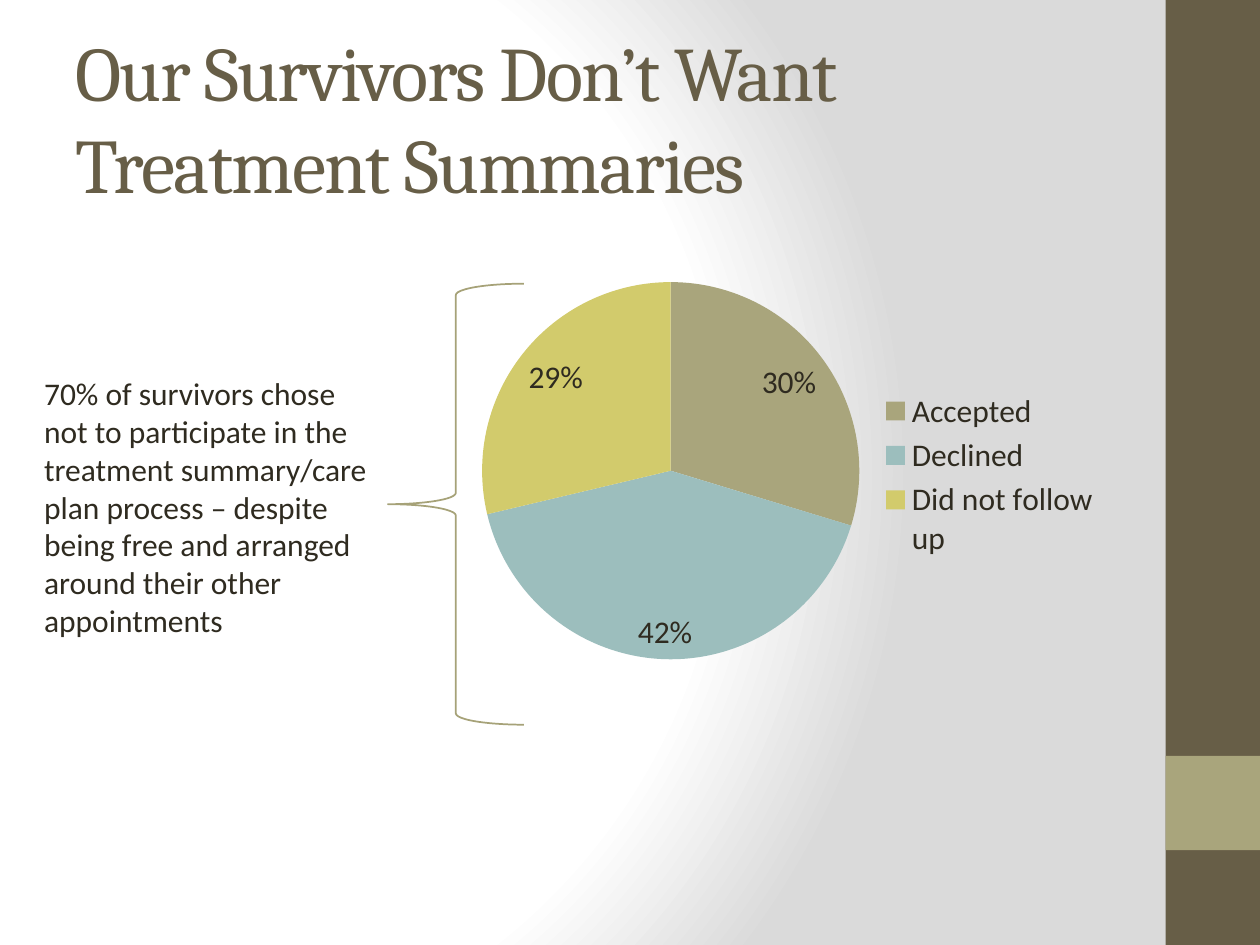
import pptx
import pptx.util
import pptx.chart.data
import pptx.dml.color
import pptx.enum.chart
import pptx.enum.shapes
import pptx.enum.text
import pptx.oxml
import pptx.oxml.ns
from pptx.util import Cm, Pt

RGBColor = pptx.dml.color.RGBColor
BROWN = RGBColor(0x67, 0x5E, 0x47)
TAN = RGBColor(0xA9, 0xA5, 0x7C)
BRACE = RGBColor(0xA6, 0xA2, 0x78)
TEAL = RGBColor(0x9C, 0xBE, 0xBD)
YELLOW = RGBColor(0xD2, 0xCB, 0x6C)
INK = RGBColor(0x2F, 0x2B, 0x20)
WHITE = RGBColor(0xFF, 0xFF, 0xFF)
GREY = RGBColor(0xDA, 0xDA, 0xDA)

TITLE = "Our Survivors Don’t Want Treatment Summaries"
NOTE = ("70% of survivors chose not to participate in the treatment summary/care "
        "plan process – despite being free and arranged around their other appointments")
SLICES = [("Accepted", 30, TAN), ("Declined", 42, TEAL), ("Did not follow up", 29, YELLOW)]
STOPS = [(0, WHITE), (75, WHITE), (100, GREY)]
BARS = [((23.5, 0, 1.9, 19.05), BROWN), ((23.5, 15.24, 1.9, 1.9), TAN)]
PLOT = {"x": 0.03, "y": 0.24, "w": 0.58, "h": 0.51}


def box(dims):
    return [Cm(d) for d in dims]


def set_background(s):
    s.background.fill.gradient()
    grad = s.element.find(".//" + pptx.oxml.ns.qn("a:gradFill"))
    stops = "".join(f'<a:gs pos="{pos * 1000}"><a:srgbClr val="{color}"/></a:gs>'
                    for pos, color in STOPS)
    new = pptx.oxml.parse_xml(
        f'<a:gradFill {pptx.oxml.ns.nsdecls("a")} rotWithShape="1"><a:gsLst>{stops}</a:gsLst>'
        '<a:path path="circle"><a:fillToRect l="20000" t="50000" r="100000" b="50000"/>'
        '</a:path></a:gradFill>')
    grad.getparent().replace(grad, new)


def add_text(s, text, dims, font="Calibri", size=18, color=INK, spacing=None,
             anchor=pptx.enum.text.MSO_ANCHOR.TOP):
    tf = s.shapes.add_textbox(*box(dims)).text_frame
    tf.word_wrap = True
    tf.vertical_anchor = anchor
    r = tf.paragraphs[0].add_run()
    r.text = text
    r.font.name, r.font.size = font, Pt(size)
    r.font.color.rgb = color
    if spacing is not None:
        r.font._element.set("spc", str(spacing * 100))


def add_pie(s, dims):
    names, values, colors = zip(*SLICES)
    data = pptx.chart.data.CategoryChartData()
    data.categories = names
    data.add_series("Series 1", values)
    chart = s.shapes.add_chart(pptx.enum.chart.XL_CHART_TYPE.PIE, *box(dims), data).chart
    chart.has_title = False
    chart.font.name, chart.font.size = "Calibri", Pt(18)
    chart.font.color.rgb = INK
    chart.has_legend = True
    chart.legend.position = pptx.enum.chart.XL_LEGEND_POSITION.RIGHT
    chart.legend.include_in_layout = False
    plot = chart.plots[0]
    plot.vary_by_categories = True
    plot.has_data_labels = True
    labels = plot.data_labels
    labels.show_percentage, labels.show_value = True, False
    labels.number_format, labels.number_format_is_linked = "0%", False
    labels.position = pptx.enum.chart.XL_LABEL_POSITION.INSIDE_END
    for i, color in enumerate(colors):
        fill = plot.series[0].points[i].format.fill
        fill.solid()
        fill.fore_color.rgb = color
    area = chart._chartSpace.find(".//" + pptx.oxml.ns.qn("c:plotArea"))
    for old in area.findall(pptx.oxml.ns.qn("c:layout")):
        area.remove(old)
    sizes = "".join(f'<c:{k} val="{v}"/>' for k, v in PLOT.items())
    area.insert(0, pptx.oxml.parse_xml(
        f'<c:layout {pptx.oxml.ns.nsdecls("c")}><c:manualLayout><c:layoutTarget val="inner"/>'
        f'<c:xMode val="edge"/><c:yMode val="edge"/>{sizes}</c:manualLayout></c:layout>'))


def add_shape(s, kind, dims):
    sp = s.shapes.add_shape(kind, *box(dims))
    sp.shadow.inherit = False
    return sp


def main():
    shapes = pptx.enum.shapes.MSO_SHAPE
    prs = pptx.Presentation()
    prs.slide_width, prs.slide_height = Cm(25.4), Cm(19.05)
    s = prs.slides.add_slide(prs.slide_layouts[6])
    set_background(s)
    for dims, color in BARS:
        sp = add_shape(s, shapes.RECTANGLE, dims)
        sp.fill.solid()
        sp.fill.fore_color.rgb = color
        sp.line.fill.background()
    add_text(s, TITLE, (1.27, 0.76, 21.16, 3.18), font="Cambria", size=44, color=BROWN,
             spacing=-1, anchor=pptx.enum.text.MSO_ANCHOR.MIDDLE)
    add_pie(s, (9.32, 2.11, 13.13, 14.91))
    brace = add_shape(s, shapes.LEFT_BRACE, (7.82, 5.72, 2.74, 8.89))
    brace.fill.background()
    brace.line.color.rgb = BRACE
    brace.line.width = Pt(1)
    add_text(s, NOTE, (0.64, 7.42, 7.19, 5.64))
    prs.save("out.pptx")


if __name__ == "__main__":
    main()
